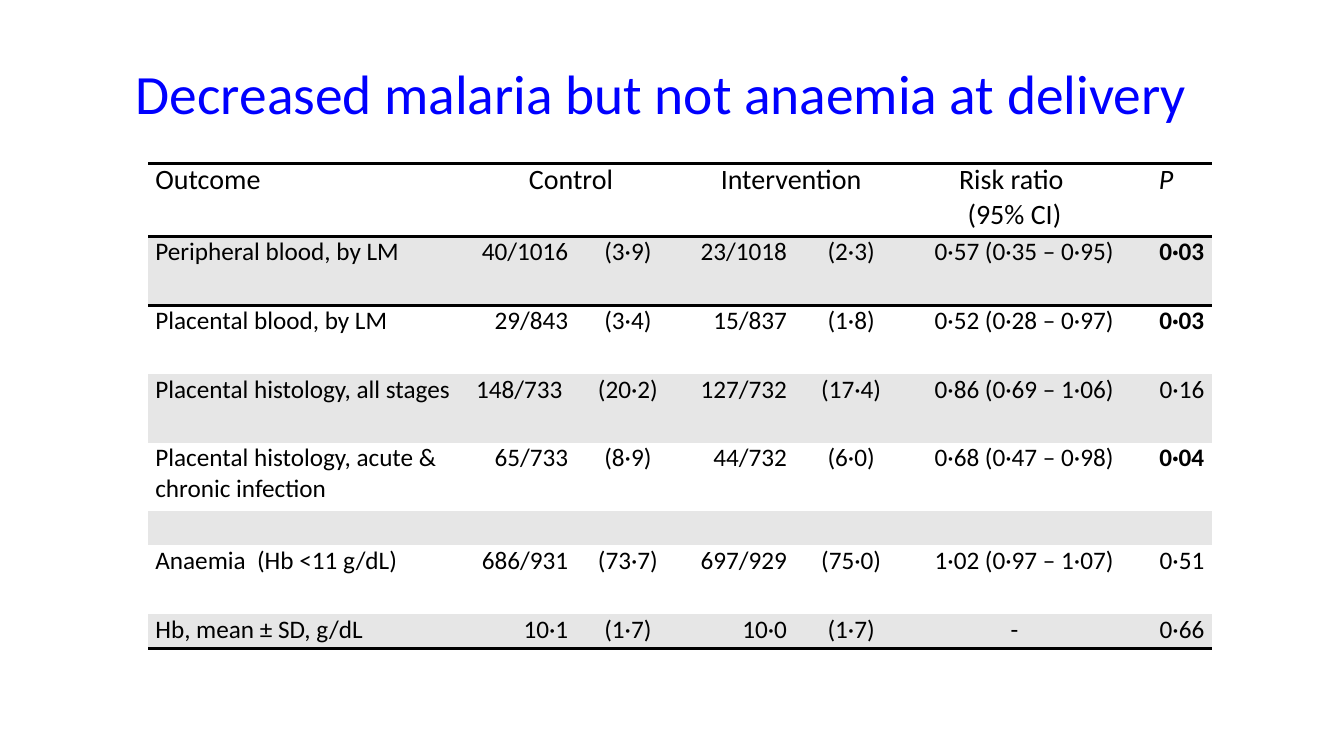
"""Build a slide with a table of malaria and anaemia outcomes at delivery."""
import dataclasses

import pptx
import pptx.dml.color
import pptx.enum.text
import pptx.oxml
import pptx.oxml.ns
import pptx.util

Pt = pptx.util.Pt
ALIGN = pptx.enum.text.PP_ALIGN
ANCHOR = pptx.enum.text.MSO_ANCHOR


@dataclasses.dataclass(frozen=True)
class Theme:
    font: str = "Calibri"
    ink: str = "000000"
    title_ink: str = "0000FF"
    band: str = "E6E6E6"
    title_size: float = 39.6
    header_size: float = 20
    body_size: float = 18
    rule_width: float = 2.25
    cell_margin: float = 5.2
    plain_table: str = "{2D5ABB26-0587-4C30-8999-92F81FD0307C}"


HEADER = ["Outcome", "Control", "", "Intervention ", "", "Risk ratio \n(95% CI)", "P"]
HEADER_SPANS = [(1, 2), (3, 4)]
OUTCOMES = [
    ["Peripheral blood, by LM", "40/1016", "(3·9)", "23/1018", "(2·3)", "0·57 (0·35 – 0·95)", "0·03"],
    ["Placental blood, by LM", "29/843", "(3·4)", "15/837", "(1·8)", "0·52 (0·28 – 0·97)", "0·03"],
    ["Placental histology, all stages", "148/733 ", "(20·2)", "127/732", "(17·4)", "0·86 (0·69 – 1·06)", "0·16"],
    ["Placental histology, acute & chronic infection", "65/733", "(8·9)", "44/732", "(6·0)", "0·68 (0·47 – 0·98)", "0·04"],
    [""] * 7,
    ["Anaemia  (Hb <11 g/dL)", "686/931", "(73·7)", "697/929", "(75·0)", "1·02 (0·97 – 1·07)", "0·51"],
    ["Hb, mean ± SD, g/dL", "10·1", "(1·7)", "10·0", "(1·7)", "-", "0·66"],
]
COLUMN_WIDTHS = [223.9, 81.4, 74.9, 81.4, 81.4, 151.9, 64.8]
ROW_HEIGHTS = [52.6, 49, 49, 49, 49, 24.5, 49, 24.5]
COLUMN_ALIGN = [ALIGN.LEFT, ALIGN.RIGHT, ALIGN.CENTER, ALIGN.RIGHT, ALIGN.CENTER, ALIGN.RIGHT, ALIGN.RIGHT]


def write(frame, text, *, font, size, color, align, bold=False, italic=False, spacing=None):
    """Fill a text frame, one paragraph for each line of text."""
    for index, line in enumerate(text.split("\n")):
        para = frame.add_paragraph() if index else frame.paragraphs[0]
        para.alignment = align
        if spacing:
            para.line_spacing = spacing
        if not line:
            end = pptx.oxml.parse_xml(
                f'<a:endParaRPr {pptx.oxml.ns.nsdecls("a")} sz="{round(size * 100)}"/>')
            para._p.append(end)
            continue
        span = para.add_run()
        span.text = line
        span.font.name = font
        span.font.size = Pt(size)
        span.font.bold = bold
        span.font.italic = italic
        span.font.color.rgb = pptx.dml.color.RGBColor.from_string(color)


def is_significant(value):
    """Tell whether a P value is below 0.05."""
    return bool(value) and float(value.replace("·", ".")) < 0.05


class SlideBuilder:
    """Hold the theme and the current slide, and add elements to it."""

    def __init__(self, page, theme):
        self.page = page
        self.theme = theme

    def title(self, text, left, top, width, height):
        """Place and format the title placeholder."""
        box = self.page.shapes.title
        box.left, box.top, box.width, box.height = map(Pt, (left, top, width, height))
        box.text_frame.word_wrap = True
        box.text_frame.vertical_anchor = ANCHOR.MIDDLE
        write(box.text_frame, text, font=self.theme.font, size=self.theme.title_size,
              color=self.theme.title_ink, align=ALIGN.CENTER, spacing=0.9)

    def rule(self, cell, side):
        """Draw a border on the top (T) or bottom (B) of a cell."""
        line = pptx.oxml.parse_xml(
            f'<a:ln{side} {pptx.oxml.ns.nsdecls("a")} w="{Pt(self.theme.rule_width)}">'
            f'<a:solidFill><a:srgbClr val="{self.theme.ink}"/></a:solidFill></a:ln{side}>')
        cell._tc.get_or_add_tcPr().append(line)

    def cell(self, cell, text, sides, banded, **text_format):
        """Set the margins, borders, fill and text of a cell."""
        cell.margin_left = cell.margin_right = Pt(self.theme.cell_margin)
        cell.margin_top = cell.margin_bottom = 0
        for side in sides:
            self.rule(cell, side)
        if banded:
            cell.fill.solid()
            cell.fill.fore_color.rgb = pptx.dml.color.RGBColor.from_string(self.theme.band)
        else:
            cell.fill.background()
        write(cell.text_frame, text, font=self.theme.font, color=self.theme.ink, **text_format)

    def table(self, left, top):
        """Add the outcomes table with its rules and grey bands."""
        rows = [HEADER] + OUTCOMES
        table = self.page.shapes.add_table(
            len(rows), len(HEADER), Pt(left), Pt(top),
            Pt(sum(COLUMN_WIDTHS)), Pt(sum(ROW_HEIGHTS))).table
        table.first_row = table.horz_banding = False
        table._tbl.tblPr.find(pptx.oxml.ns.qn("a:tableStyleId")).text = self.theme.plain_table
        for column, width in zip(table.columns, COLUMN_WIDTHS):
            column.width = Pt(width)
        for row, height in zip(table.rows, ROW_HEIGHTS):
            row.height = Pt(height)
        for first, last in HEADER_SPANS:
            table.cell(0, first).merge(table.cell(0, last))
        borders = {0: "TB", 1: "T", len(rows) - 1: "B"}
        last_column = len(HEADER) - 1
        for r, values in enumerate(rows):
            for c, text in enumerate(values):
                centred = text == "-" or (r == 0 and c > 0)
                self.cell(
                    table.cell(r, c), text, borders.get(r, ""), banded=r % 2 == 1,
                    size=self.theme.body_size if r else self.theme.header_size,
                    align=ALIGN.CENTER if centred else COLUMN_ALIGN[c],
                    bold=r > 0 and c == last_column and is_significant(text),
                    italic=r == 0 and c == last_column)


def main():
    """Create the deck and save it."""
    deck = pptx.Presentation()
    deck.slide_width, deck.slide_height = Pt(960), Pt(540)
    page = deck.slides.add_slide(deck.slide_layouts.get_by_name("Title Only"))
    builder = SlideBuilder(page, Theme())
    builder.table(105.8, 116.6)
    builder.title("Decreased malaria but not anaemia at delivery", 56.2, 37.4, 832.3, 63.4)
    deck.save("out.pptx")


if __name__ == "__main__":
    main()
